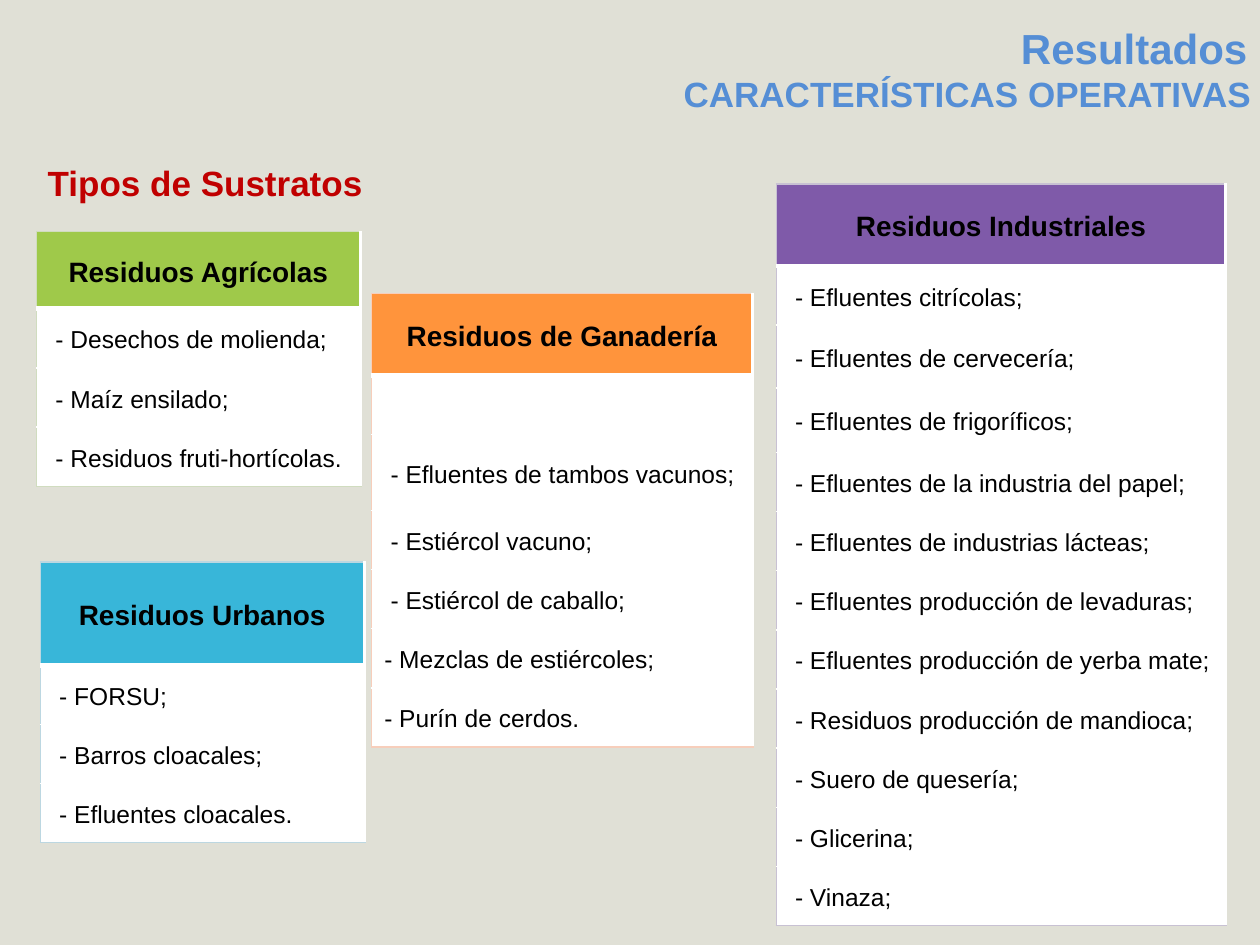
from dataclasses import dataclass
from lxml.etree import SubElement
from pptx import Presentation
from pptx.dml.color import RGBColor
from pptx.enum.text import MSO_ANCHOR, MSO_AUTO_SIZE, PP_ALIGN
from pptx.oxml.ns import qn
from pptx.util import Inches, Pt

ROW = 0.47
WHITE, BLACK, BLUE, RED = "FFFFFF", "000000", "558ED5", "C00000"
HEAD = {"size": Pt(16), "bold": True}
ITEM = {"size": Pt(14), "bold": False}


@dataclass
class Line:
    text: str
    high: float = ROW
    left: float = 0.15


@dataclass
class Group:
    left: float
    top: float
    wide: float
    fill: str
    edge: str
    head: Line
    lines: list[Line]


GROUPS = [
    Group(0.29, 1.84, 2.57, "9FC94A", "D0DCBF", Line("Residuos Agrícolas", 0.61, 0.05), [
        Line("- Desechos de molienda;"),
        Line("- Maíz ensilado;"),
        Line("- Residuos fruti-hortícolas."),
    ]),
    Group(2.95, 2.33, 3.02, "FF943C", "F7CEBB", Line("Residuos de Ganadería", 0.65, 0.05), [
        Line(""),
        Line("- Efluentes de tambos vacunos;", 0.6),
        Line("- Estiércol vacuno;"),
        Line("- Estiércol de caballo;"),
        Line("- Mezclas de estiércoles;", left=0.1),
        Line("- Purín de cerdos.", left=0.1),
    ]),
    Group(0.32, 4.46, 2.57, "38B6D9", "BCD7E1", Line("Residuos Urbanos", 0.82, 0.05), [
        Line("- FORSU;"),
        Line("- Barros cloacales;"),
        Line("- Efluentes cloacales."),
    ]),
    Group(6.16, 1.46, 3.57, "7F5AA9", "C8C1D3", Line("Residuos Industriales", 0.65, 0.05), [
        Line("- Efluentes citrícolas;"),
        Line("- Efluentes de cervecería;", 0.5),
        Line("- Efluentes de frigoríficos;", 0.51),
        Line("- Efluentes de la industria del papel;"),
        Line("- Efluentes de industrias lácteas;"),
        Line("- Efluentes producción de levaduras;"),
        Line("- Efluentes producción de yerba mate;"),
        Line("- Residuos producción de mandioca;"),
        Line("- Suero de quesería;"),
        Line("- Glicerina;"),
        Line("- Vinaza;"),
    ]),
]


def apply(thing, form: dict) -> None:
    """Set each value of the dict on the thing."""
    for name, value in form.items():
        setattr(thing, name, value)


def paint(color, code: str) -> None:
    """Give a fill or a font a solid colour."""
    if hasattr(color, "solid"):
        color.solid()
        color = color.fore_color
    else:
        color = color.color
    color.rgb = RGBColor.from_string(code)


def write(frame, text: str, code: str, form: dict, align=PP_ALIGN.LEFT, space=1.0) -> None:
    """Fill a text frame with one styled paragraph."""
    para = frame.paragraphs[0]
    apply(para, {"alignment": align, "line_spacing": space})
    font = para.font
    if text:
        run = para.add_run()
        run.text = text
        font = run.font
    apply(font, {"name": "Arial", **form})
    paint(font, code)


def border(cell, side: str, code: str, width: float) -> None:
    """Draw one side of a cell."""
    line = SubElement(cell._tc.get_or_add_tcPr(), qn(f"a:ln{side}"), w=str(Pt(width)))
    fill = SubElement(line, qn("a:solidFill"))
    SubElement(fill, qn("a:srgbClr"), val=code)


def draw(slide, group: Group) -> None:
    """Add the table of one group of residues."""
    lines = [group.head, *group.lines]
    last = len(lines) - 1
    high = sum(line.high for line in lines)
    table = slide.shapes.add_table(
        len(lines), 1, Inches(group.left), Inches(group.top), Inches(group.wide), Inches(high)
    ).table
    table.horz_banding = False
    for index, line in enumerate(lines):
        top = index == 0
        table.rows[index].height = Inches(line.high)
        cell = table.cell(index, 0)
        apply(cell, {
            "margin_left": Inches(line.left), "margin_right": Inches(0.05),
            "margin_top": 0, "margin_bottom": 0, "vertical_anchor": MSO_ANCHOR.MIDDLE,
        })
        border(cell, "L", group.edge, 0.75)
        border(cell, "R", WHITE, 2)
        if top:
            border(cell, "T", group.edge, 0.75)
            border(cell, "B", WHITE, 3)
        elif index == last:
            border(cell, "B", group.edge, 0.75)
        paint(cell.fill, group.fill if top else WHITE)
        write(cell.text_frame, line.text, BLACK, HEAD if top else ITEM,
              PP_ALIGN.CENTER if top else PP_ALIGN.LEFT, 1.15)


def place(shape, left: float, top: float, wide: float, high: float) -> None:
    """Move a shape and set its size."""
    apply(shape, {"left": Inches(left), "top": Inches(top),
                  "width": Inches(wide), "height": Inches(high)})


def main() -> None:
    """Build the slide and save it."""
    deck = Presentation()
    apply(deck, {"slide_width": Inches(10), "slide_height": Inches(7.5)})
    slide = deck.slides.add_slide(deck.slide_layouts[5])
    paint(slide.background.fill, "E0E0D6")
    flush = {"margin_left": 0, "margin_right": 0, "margin_top": 0, "margin_bottom": 0,
             "vertical_anchor": MSO_ANCHOR.MIDDLE, "word_wrap": True,
             "auto_size": MSO_AUTO_SIZE.NONE}

    title = slide.shapes.title
    place(title, 7.84, 0.18, 2.06, 0.4)
    apply(title.text_frame, flush)
    write(title.text_frame, "Resultados", BLUE, {"size": Pt(24), "bold": True}, PP_ALIGN.RIGHT)

    bold = {"size": Pt(20), "bold": True}
    label = slide.shapes.add_textbox(0, 0, 0, 0)
    place(label, 0.28, 1.23, 2.72, 0.44)
    label.text_frame.word_wrap = False
    write(label.text_frame, "Tipos de Sustratos", RED, bold)

    theme = slide.shapes.add_textbox(0, 0, 0, 0)
    place(theme, 2.38, 0.57, 7.55, 0.34)
    apply(theme.text_frame, flush)
    write(theme.text_frame, "CARACTERÍSTICAS OPERATIVAS", BLUE, bold, PP_ALIGN.RIGHT)

    for group in GROUPS:
        draw(slide, group)
    deck.save("out.pptx")


if __name__ == "__main__":
    main()
